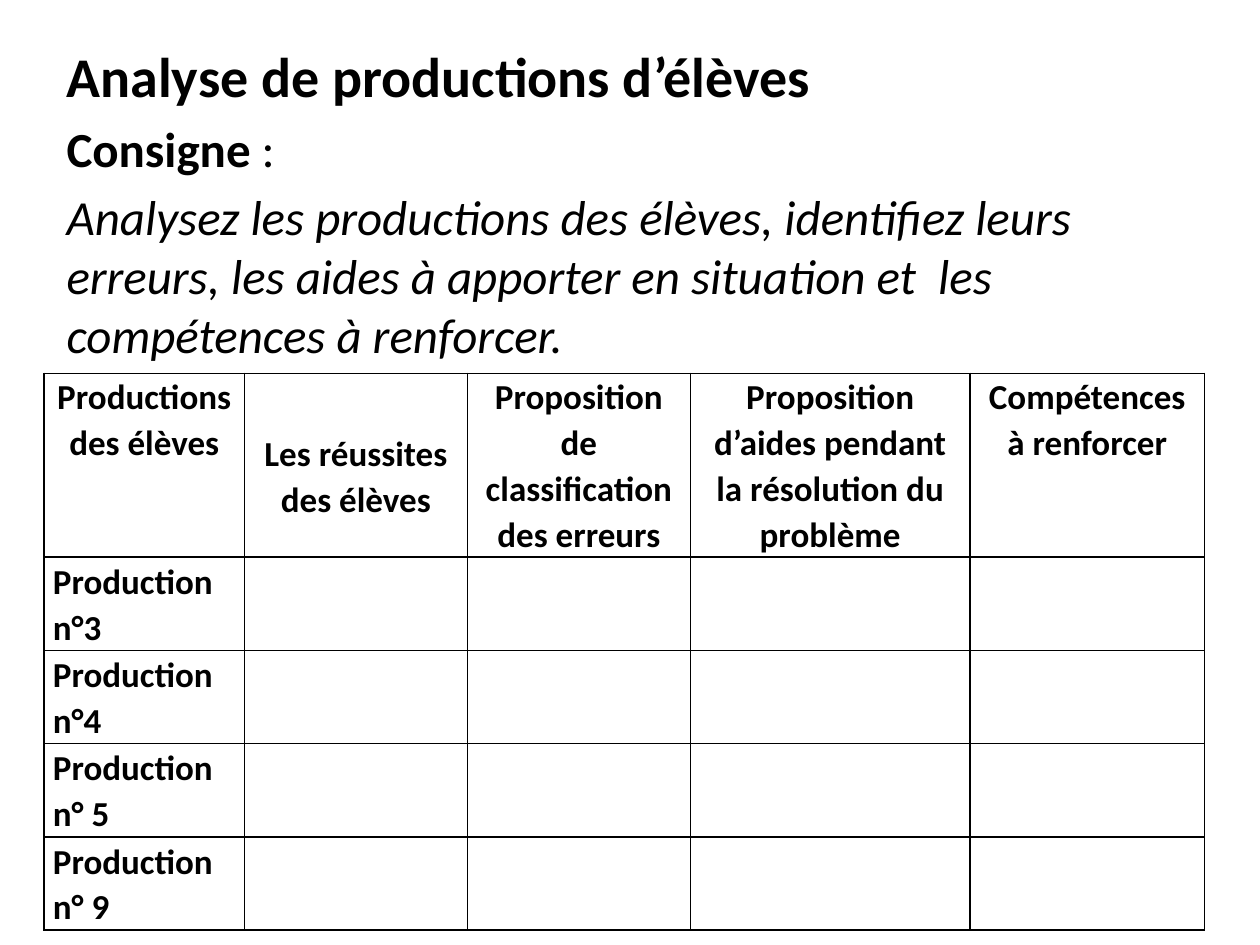
from lxml.etree import SubElement
from pptx import Presentation
from pptx.dml.color import RGBColor
from pptx.enum.text import MSO_ANCHOR, PP_ALIGN
from pptx.oxml.ns import qn
from pptx.util import Inches, Pt

COLORS = {"ink": "000000", "paper": "FFFFFF"}
FONT = "Calibri"
WIDTH, HEIGHT = Inches(10), Inches(7.5)
COLS = [1.59, 1.77, 1.77, 2.22, 1.86]
ROWS = [1.46] + [0.74] * 4
HEADERS = [
    "Productions des élèves",
    "Les réussites des élèves",
    "Proposition de classification des erreurs",
    "Proposition d’aides pendant la résolution du problème",
    "Compétences à renforcer",
]
PRODUCTIONS = ["n°3", "n°4", "n° 5", "n° 9"]


def add_run(p, text, size=28, bold=False, italic=False, color="ink"):
    """Append a formatted run to a paragraph."""
    r = p.add_run()
    r.text = text
    r.font.name = FONT
    r.font.size = Pt(size)
    r.font.bold = bold
    r.font.italic = italic
    r.font.color.rgb = RGBColor.from_string(COLORS[color])


def add_intro(s):
    """Add the title and the instructions."""
    box = s.shapes.add_textbox(
        int(WIDTH * 0.043), int(HEIGHT * 0.037), int(WIDTH * 0.9), int(HEIGHT * 0.35))
    tf = box.text_frame
    tf.word_wrap = True
    paragraphs = [
        [("Analyse de productions d’élèves ", {"size": 32, "bold": True})],
        [("Consigne", {"bold": True}), ("\u00a0: ", {})],
        [("Analysez les productions des élèves, identifiez leurs erreurs, "
          "les aides à apporter en situation et  les compétences à renforcer.",
          {"italic": True})],
    ]
    for i, runs in enumerate(paragraphs):
        p = tf.paragraphs[0] if i == 0 else tf.add_paragraph()
        p.space_before = Pt(runs[0][1].get("size", 28) * 0.2)
        for text, fmt in runs:
            add_run(p, text, **fmt)


def add_borders(cell):
    """Draw thin lines on the four sides of a cell."""
    pr = cell._tc.get_or_add_tcPr()
    for i, side in enumerate(("lnL", "lnR", "lnT", "lnB")):
        ln = pr.makeelement(qn(f"a:{side}"), {"w": str(Pt(1))})
        fill = SubElement(ln, qn("a:solidFill"))
        SubElement(fill, qn("a:srgbClr"), val=COLORS["ink"])
        pr.insert(i, ln)


def fill_cell(cell, text="", align=PP_ALIGN.LEFT, anchor=MSO_ANCHOR.MIDDLE, top=0):
    """Set the fill, borders, margins and text of a cell."""
    cell.fill.solid()
    cell.fill.fore_color.rgb = RGBColor.from_string(COLORS["paper"])
    add_borders(cell)
    cell.margin_left = cell.margin_right = Inches(0.07)
    cell.margin_top, cell.margin_bottom = Inches(top), 0
    cell.vertical_anchor = anchor
    if text:
        p = cell.text_frame.paragraphs[0]
        p.alignment = align
        p.line_spacing = 1.07
        p.space_after = Pt(8)
        add_run(p, text, size=20, bold=True)


def add_grid(s):
    """Add the analysis table."""
    table = s.shapes.add_table(
        len(ROWS), len(COLS), int(WIDTH * 0.035), int(HEIGHT * 0.395),
        Inches(sum(COLS)), Inches(sum(ROWS))).table
    for col, width in zip(table.columns, COLS):
        col.width = Inches(width)
    for row, height in zip(table.rows, ROWS):
        row.height = Inches(height)
    for c, header in enumerate(HEADERS):
        fill_cell(table.cell(0, c), header, align=PP_ALIGN.CENTER,
                  anchor=MSO_ANCHOR.TOP, top=0.45 if c == 1 else 0)
    for r, number in enumerate(PRODUCTIONS, 1):
        fill_cell(table.cell(r, 0), f"Production {number}\u00a0")
        for c in range(1, len(COLS)):
            fill_cell(table.cell(r, c))


def main():
    """Build and save the slide."""
    prs = Presentation()
    prs.slide_width, prs.slide_height = WIDTH, HEIGHT
    s = prs.slides.add_slide(prs.slide_layouts[6])
    add_intro(s)
    add_grid(s)
    prs.save("out.pptx")


main()
